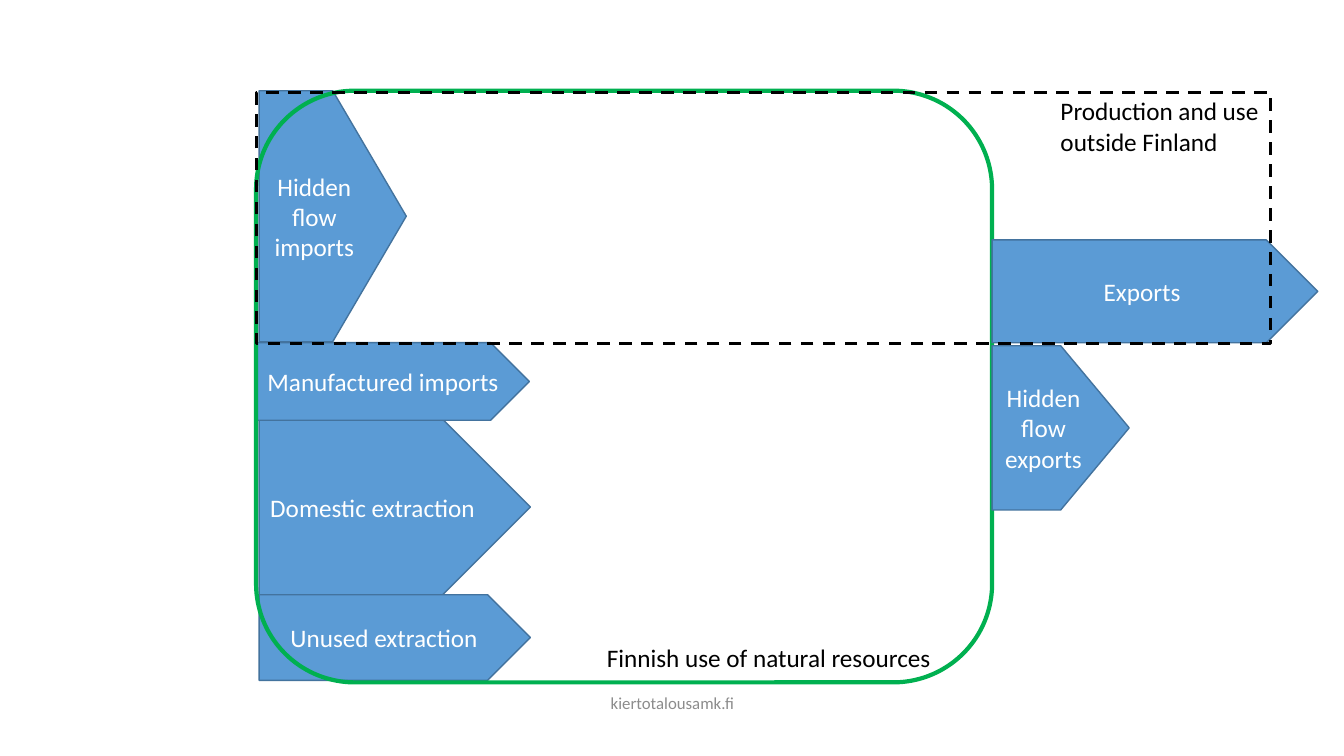
from pptx import Presentation
from pptx.dml.color import RGBColor
from pptx.enum.dml import MSO_LINE
from pptx.enum.shapes import MSO_SHAPE
from pptx.enum.text import MSO_ANCHOR, PP_ALIGN
from pptx.util import Inches, Pt

PENTAGON = MSO_SHAPE.PENTAGON
RECTANGLE = MSO_SHAPE.RECTANGLE
ROUNDED_RECTANGLE = MSO_SHAPE.ROUNDED_RECTANGLE
DASH = MSO_LINE.DASH
LEFT, CENTER = PP_ALIGN.LEFT, PP_ALIGN.CENTER
TOP, MIDDLE = MSO_ANCHOR.TOP, MSO_ANCHOR.MIDDLE

BLUE = RGBColor(0x5B, 0x9B, 0xD5)
DARK_BLUE = RGBColor(0x43, 0x73, 0x9E)
GREEN = RGBColor(0x00, 0xB0, 0x50)
GRAY = RGBColor(0x8C, 0x8C, 0x8C)
BLACK = RGBColor(0x00, 0x00, 0x00)
WHITE = RGBColor(0xFF, 0xFF, 0xFF)

FINLAND_BOX = (2.54, 0.9, 7.3, 5.87)
ABROAD_BOX = (2.54, 0.92, 10.06, 2.49)

# Label, left offset, top offset, width, height
INFLOWS = [
    ("Domestic extraction", 0.03, 3.25, 2.69, 1.76),
    ("Manufactured imports", 0, 2.5, 2.71, 0.77),
    ("Hidden flow imports", 0.03, 0, 1.46, 2.49),
    ("Unused extraction", 0.03, 5, 2.69, 0.85),
]
OUTFLOWS = [
    ("Exports", 0, 1.48, 3.23, 1.02),
    ("Hidden flow exports", 0, 2.53, 1.36, 1.63),
]


def write_text(shape, text, size=18, color=BLACK, align=LEFT, anchor=TOP):
    frame = shape.text_frame
    frame.word_wrap = True
    frame.vertical_anchor = anchor
    paragraph = frame.paragraphs[0]
    paragraph.text = text
    paragraph.alignment = align
    paragraph.font.name = "Calibri"
    paragraph.font.size = Pt(size)
    paragraph.font.color.rgb = color


def add_label(slide, box, text, **text_format):
    label = slide.shapes.add_textbox(*map(Inches, box))
    write_text(label, text, **text_format)


def add_outlined(slide, kind, box, line_color, line_width, fill=None):
    shape = slide.shapes.add_shape(kind, *map(Inches, box))
    shape.shadow.inherit = False
    if fill is None:
        shape.fill.background()
    else:
        shape.fill.solid()
        shape.fill.fore_color.rgb = fill
    shape.line.color.rgb = line_color
    shape.line.width = Pt(line_width)
    return shape


def add_flows(slide, left, top, flows):
    for text, offset_x, offset_y, width, height in flows:
        box = (left + offset_x, top + offset_y, width, height)
        arrow = add_outlined(slide, PENTAGON, box, DARK_BLUE, 1, fill=BLUE)
        write_text(arrow, text, color=WHITE, align=CENTER, anchor=MIDDLE)


def add_finland(slide, box):
    left, top, width, height = box
    # Flows entering, boundary, then flows leaving
    add_flows(slide, left, top, INFLOWS)
    add_outlined(slide, ROUNDED_RECTANGLE, box, GREEN, 3)
    add_flows(slide, left + width, top, OUTFLOWS)
    add_label(slide, (left + 3.38, top + height - 0.45, 3.97, 0.4),
              "Finnish use of natural resources")


def add_abroad(slide, box):
    left, top, width, height = box
    boundary = add_outlined(slide, RECTANGLE, box, BLACK, 2.25)
    boundary.line.dash_style = DASH
    add_label(slide, (left + width - 2.18, top - 0.02, 2.77, 0.71),
              "Production and use outside Finland")


def main():
    presentation = Presentation()
    presentation.slide_width = Inches(13.33)
    presentation.slide_height = Inches(7.5)
    slide = presentation.slides.add_slide(presentation.slide_layouts[6])

    # Footer
    add_label(slide, (4.42, 6.77, 4.5, 0.4), "kiertotalousamk.fi",
              size=12, color=GRAY, align=CENTER, anchor=MIDDLE)
    # Material flow diagram
    add_finland(slide, FINLAND_BOX)
    add_abroad(slide, ABROAD_BOX)

    presentation.save("out.pptx")


if __name__ == "__main__":
    main()
